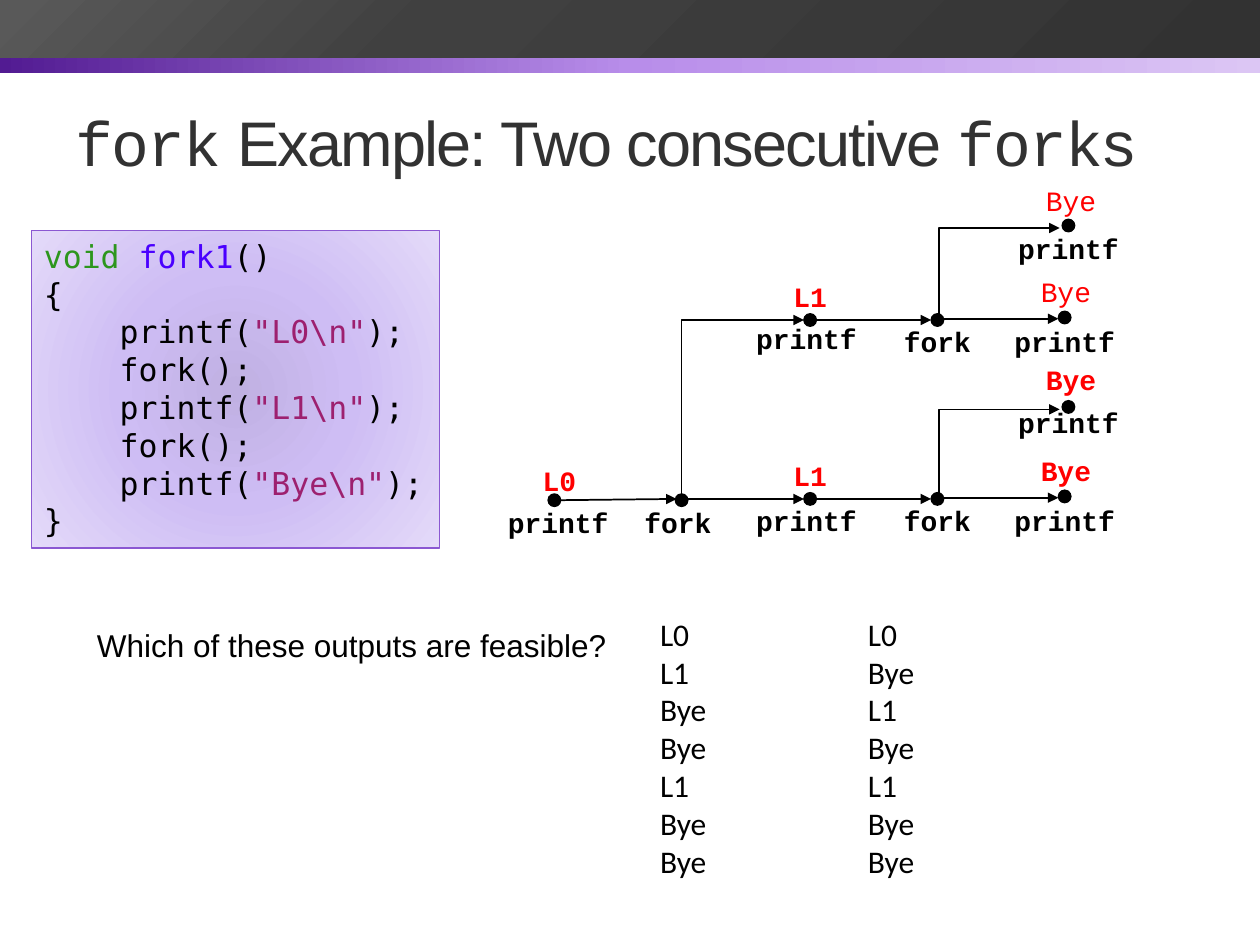
from lxml.etree import SubElement
from pptx import Presentation
from pptx.dml.color import RGBColor
from pptx.enum.shapes import MSO_CONNECTOR as LINK, MSO_SHAPE as SHAPE
from pptx.enum.text import MSO_ANCHOR as ANCHOR, PP_ALIGN as ALIGN
from pptx.oxml import parse_xml
from pptx.oxml.ns import nsdecls, qn
from pptx.util import Inches, Pt

BLACK, RED, DARK = "000000", "FF0000", "323232"
COURIER, CODE_FONT = "Courier New", "DejaVu Sans Mono"
KEYWORD, FUNCTION, STRING = "2D961E", "4A00FF", "9D206F"


def color(value):
    return RGBColor.from_string(value)


def write(frame, lines, size=18, font="Arial", ink=BLACK, bold=False,
          align=ALIGN.LEFT, anchor=ANCHOR.TOP, wrap=False, pitch=None, spacing=None):
    frame.word_wrap = wrap
    frame.vertical_anchor = anchor
    for index, line in enumerate(lines):
        paragraph = frame.add_paragraph() if index else frame.paragraphs[0]
        paragraph.alignment = align
        if pitch:
            paragraph.line_spacing = Pt(pitch)
        for text, style in [(line, {})] if isinstance(line, str) else line:
            run = paragraph.add_run()
            run.text = text
            run.font.size = Pt(size)
            run.font.bold = bold
            run.font.name = style.get("font", font)
            run.font.color.rgb = color(style.get("ink", ink))
            if spacing:
                run.font._element.set("spc", str(spacing * 100))


def text_box(slide, left, top, width, height, lines, **style):
    box = slide.shapes.add_textbox(Inches(left), Inches(top), Inches(width), Inches(height))
    write(box.text_frame, lines, **style)


def panel(slide, kind, left, top, width, height, fill, border=None):
    shape = slide.shapes.add_shape(kind, Inches(left), Inches(top), Inches(width), Inches(height))
    shape.shadow.inherit = False
    shape.fill.solid()
    shape.fill.fore_color.rgb = color(fill)
    if border:
        shape.line.color.rgb = color(border)
        shape.line.width = Pt(0.75)
    else:
        shape.line.fill.background()
    return shape


def gradient(shape, stops, angle=None):
    stop_list = "".join(f'<a:gs pos="{position * 1000}"><a:srgbClr val="{value}"/></a:gs>'
                        for position, value in stops)
    if angle is None:
        course = ('<a:path path="circle"><a:fillToRect l="100000" t="100000" '
                  'r="100000" b="100000"/></a:path>')
    else:
        course = f'<a:lin ang="{angle * 60000}" scaled="0"/>'
    solid = shape._element.spPr.find(qn("a:solidFill"))
    solid.getparent().replace(solid, parse_xml(
        f'<a:gradFill {nsdecls("a")} rotWithShape="1"><a:gsLst>{stop_list}</a:gsLst>'
        f'{course}</a:gradFill>'))


def arrow(slide, start, end, kind=LINK.STRAIGHT):
    link = slide.shapes.add_connector(kind, *map(Inches, start + end))
    link.line.color.rgb = color(BLACK)
    link.line.width = Pt(1)
    SubElement(link.line._get_or_add_ln(), qn("a:tailEnd"), type="triangle")
    properties = link._element.spPr
    SubElement(properties, qn("a:effectLst"))
    return properties


def rising_arrow(slide, start, end):
    run, rise = end[0] - start[0], start[1] - end[1]
    middle_x, middle_y = (start[0] + end[0]) / 2, (start[1] + end[1]) / 2
    properties = arrow(slide, (middle_x + rise / 2, middle_y + run / 2),
                       (middle_x - rise / 2, middle_y - run / 2), LINK.ELBOW)
    properties.find(qn("a:xfrm")).set("rot", "5400000")
    properties.find(qn("a:prstGeom")).set("prst", "bentConnector2")


def event(slide, x, y):
    panel(slide, SHAPE.OVAL, x - 0.05, y - 0.05, 0.1, 0.1, BLACK, BLACK)


def label(slide, x, top, text, ink=BLACK, bold=True):
    text_box(slide, x - 0.52, top, 1.04, 0.37, [text], size=16, font=COURIER,
             ink=ink, bold=bold, align=ALIGN.CENTER, wrap=True)


def header(slide, left, top, width):
    stripe = panel(slide, SHAPE.RECTANGLE, left, top + 0.24, width, 0.34, "B88DEA")
    gradient(stripe, [(0, "521B92"), (50, "B88DEA"), (100, "DCC6F4")], 0)
    band = panel(slide, SHAPE.RECTANGLE, left, top, width, 0.46, "404040")
    gradient(band, [(0, DARK), (66, "404040"), (99, "595959")], 225)


def title(slide, left, top, width, height):
    mono = {"font": COURIER}
    words = [("fork", mono), (" Example: Two consecutive ", {}), ("fork", mono), ("s", {})]
    text_box(slide, left, top, width, height, [words], size=36, ink=DARK,
             anchor=ANCHOR.MIDDLE, wrap=True, spacing=-1)


def code_listing(slide, left, top, width, height):
    def print_call(text):
        return [("    printf(", {}), (f'"{text}\\n"', {"ink": STRING}), (");", {})]

    fork_call = "    fork();"
    signature = [("void ", {"ink": KEYWORD}), ("fork1", {"ink": FUNCTION}), ("()", {})]
    box = panel(slide, SHAPE.RECTANGLE, left, top, width, height, "CEBDF4", "8B58D2")
    gradient(box, [(0, "C0B0E2"), (45, "CEBDF4"), (100, "E4DAF9")])
    write(box.text_frame,
          [signature, "{", print_call("L0"), fork_call, print_call("L1"), fork_call,
           print_call("Bye"), "}"], font=CODE_FONT, pitch=21.6)


def process(slide, left, y, bold_bye, step_label, child_label, child_rise):
    fork_x, parent_x, child_x = left + 1.01, left + 2.02, left + 2.05
    child_y = y - child_rise
    event(slide, left, y)
    event(slide, fork_x, y)
    event(slide, parent_x, y - 0.02)
    event(slide, child_x, child_y)
    arrow(slide, (left + 0.05, y), (fork_x - 0.05, y))
    arrow(slide, (fork_x + 0.05, y - 0.01), (parent_x - 0.05, y - 0.01))
    rising_arrow(slide, (fork_x + 0.01, y - 0.04), (child_x - 0.07, child_y + 0.02))
    label(slide, left - 0.03, y + step_label, "printf")
    label(slide, fork_x, y - 0.01, "fork")
    label(slide, parent_x, y - 0.01, "printf")
    label(slide, child_x, child_y + child_label, "printf")
    label(slide, left, y - 0.37, "L1", RED)
    label(slide, parent_x + 0.01, y - 0.41, "Bye", RED, bold_bye)
    label(slide, child_x + 0.02, y - 1.13, "Bye", RED, bold_bye)


def process_graph(slide, left, top):
    child_y, parent_y = top + 1.12, top + 2.54
    start_x, fork_x, branch_x = left + 0.48, left + 1.49, left + 2.51
    event(slide, start_x, parent_y + 0.01)
    event(slide, fork_x, parent_y + 0.01)
    arrow(slide, (start_x + 0.05, parent_y + 0.01), (fork_x - 0.04, parent_y))
    arrow(slide, (fork_x + 0.05, parent_y), (branch_x - 0.05, parent_y))
    rising_arrow(slide, (fork_x, parent_y - 0.04), (branch_x - 0.05, child_y))
    label(slide, start_x + 0.03, parent_y, "printf")
    label(slide, fork_x - 0.03, parent_y, "fork")
    label(slide, start_x + 0.04, parent_y - 0.33, "L0", RED)
    process(slide, branch_x, child_y, False, -0.04, 0, 0.75)
    process(slide, branch_x, parent_y, True, -0.01, -0.06, 0.73)


def question(slide, left, top):
    text_box(slide, left, top + 0.09, 4.28, 0.4, ["Which of these outputs are feasible?"])
    outputs = ["L0 L1 Bye Bye L1 Bye Bye", "L0 Bye L1 Bye L1 Bye Bye"]
    for column, output in enumerate(outputs):
        text_box(slide, left + 4.47 + column * 1.65, top, 0.57, 2.22,
                 output.split(), font="Calibri")


def main():
    deck = Presentation()
    deck.slide_width, deck.slide_height = Inches(10), Inches(7.5)
    slide = deck.slides.add_slide(deck.slide_layouts[6])
    header(slide, 0, 0, 10)
    title(slide, 0.5, 0.58, 9, 1.08)
    code_listing(slide, 0.25, 1.83, 3.24, 2.52)
    process_graph(slide, 3.92, 1.42)
    question(slide, 0.67, 4.83)
    deck.save("out.pptx")


if __name__ == "__main__":
    main()
